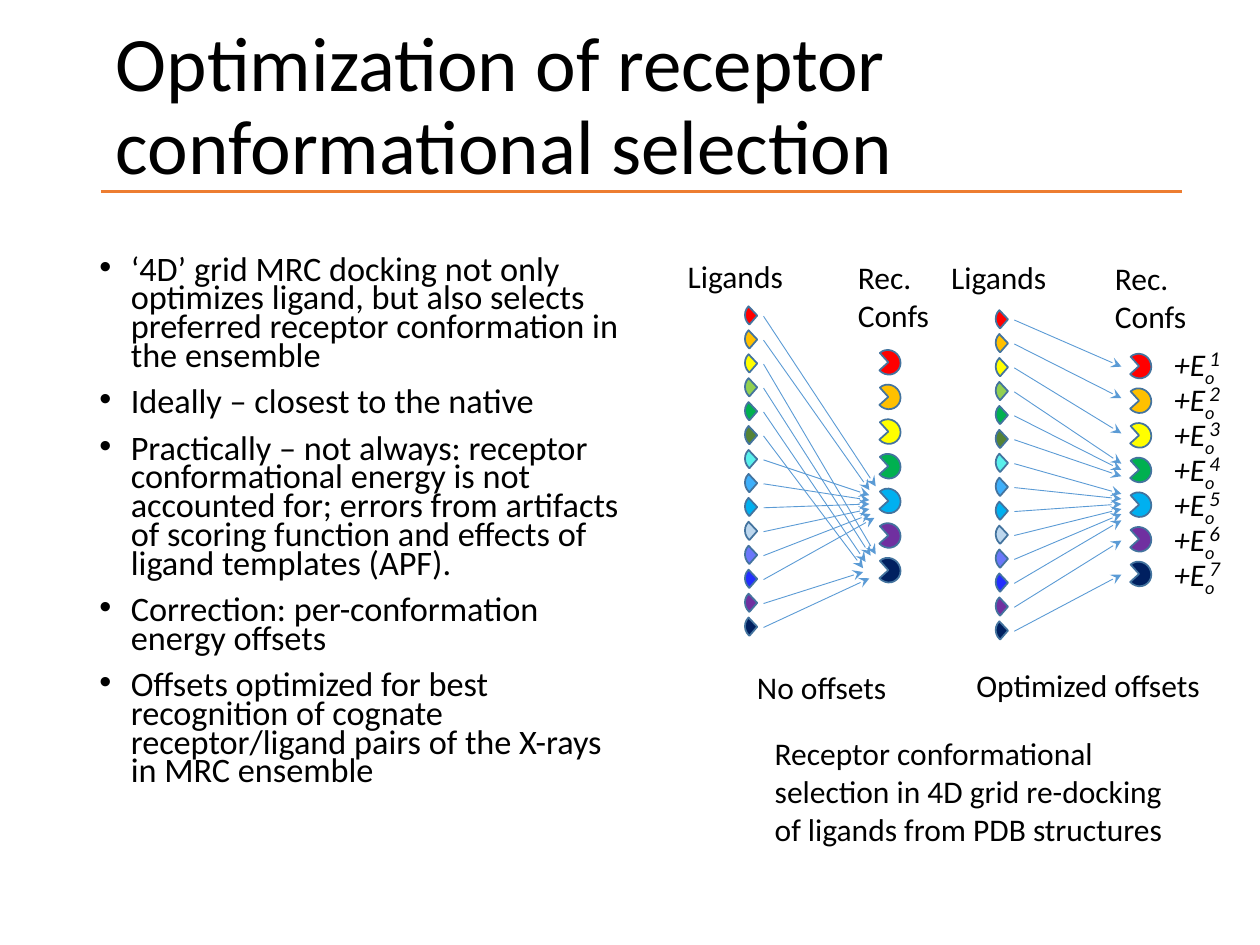
from pptx import Presentation
from pptx import util as u
from pptx.dml.color import RGBColor
from pptx.enum import shapes, text
from pptx.oxml.ns import qn
from lxml import etree

BLACK = RGBColor(0, 0, 0)
ORANGE = RGBColor(0xED, 0x7D, 0x31)
BLUE = RGBColor(0x5B, 0x9B, 0xD5)
EDGE = RGBColor(0x43, 0x73, 0x9E)

TITLE = "Optimization of receptor conformational selection"
POINTS = [
    "‘4D’ grid MRC docking not only optimizes ligand, but also selects "
    "preferred receptor conformation in the ensemble",
    "Ideally – closest to the native",
    "Practically – not always: receptor conformational energy is not accounted for; "
    "errors from artifacts of scoring function and effects of ligand templates (APF).",
    "Correction: per-conformation energy offsets",
    "Offsets optimized for best recognition of cognate receptor/ligand pairs "
    "of the X-rays in MRC ensemble",
]
LABELS = [
    ("Ligands", 5.36, 1.99, 1.02, 0.4),
    ("Ligands", 7.45, 2, 1.02, 0.4),
    ("Rec. Confs", 6.71, 2, 0.95, 0.71),
    ("Rec. Confs", 8.75, 2.01, 0.95, 0.71),
    ("No offsets", 5.91, 5.25, 1.47, 0.4),
    ("Optimized offsets", 7.65, 5.24, 1.99, 0.4),
    ("Receptor conformational selection in 4D grid re-docking of ligands "
     "from PDB structures", 6.05, 5.78, 3.52, 1.01),
]
LIGANDS = ["FF0000", "FFC000", "FFFF00", "92D050", "00B050", "548235", "59F0EC",
           "3EAFFA", "00B0F0", "BDD7EE", "6B77FA", "222EFF", "7030A0", "002060"]
CONFS = ["FF0000", "FFC000", "FFFF00", "00B050", "00B0F0", "7030A0", "002060"]
PANELS = [
    {"left": 5.91, "top": 2.41, "tips": [
        (6.95, 3.86), (6.9, 3.89), (6.95, 4.4), (6.91, 4.41), (6.87, 4.46),
        (6.85, 4.51), (6.9, 3.93), (6.9, 3.97), (6.9, 4), (6.9, 4.04),
        (6.91, 4.08), (6.94, 4.11), (6.85, 4.54), (6.9, 4.59)]},
    {"left": 7.9, "top": 2.44, "tips": [
        (8.9, y) for y in (2.91, 3.16, 3.44, 3.68, 3.73, 3.78, 3.92,
                           3.96, 4, 4.04, 4.08, 4.13, 4.29, 4.56)]},
]
STEP = 0.19
GAP = 1.65 / 6
RISE = 1.67 / 6

prs = Presentation()
prs.slide_width, prs.slide_height = u.Inches(10), u.Inches(7.5)
slide = prs.slides.add_slide(prs.slide_layouts[5])


def put(obj, vals):
    for key, val in vals.items():
        setattr(obj, key, val)


def write(para, words, size, **more):
    run = para.add_run()
    run.text = words
    put(run.font, {"name": "Calibri", "size": u.Pt(size), **more})
    run.font.color.rgb = BLACK
    return run


def box(x, y, w, h):
    frame = slide.shapes.add_textbox(*map(u.Inches, (x, y, w, h))).text_frame
    frame.word_wrap = True
    return frame


def label(words, x, y, w, h, size=18, **more):
    frame = box(x, y, w, h)
    frame.auto_size = text.MSO_AUTO_SIZE.SHAPE_TO_FIT_TEXT
    write(frame.paragraphs[0], words, size, **more)
    return frame.paragraphs[0]


def line(start, end, color, width, arrow=False):
    link = slide.shapes.add_connector(
        shapes.MSO_CONNECTOR.STRAIGHT, *map(u.Inches, (*start, *end)))
    link.line.color.rgb = color
    link.line.width = u.Pt(width)
    if arrow:
        etree.SubElement(link.line._get_or_add_ln(), qn("a:tailEnd"), type="stealth")
    etree.SubElement(link._element.spPr, qn("a:effectLst"))


def pie(x, y, color, turn, angles=()):
    form = slide.shapes.add_shape(
        shapes.MSO_SHAPE.PIE, *map(u.Inches, (x, y, 0.2, 0.19)))
    form.rotation = turn
    for i, angle in enumerate(angles):
        form.adjustments[i] = angle
    form.shadow.inherit = False
    form.fill.solid()
    form.fill.fore_color.rgb = RGBColor.from_string(color)
    form.line.color.rgb = EDGE
    form.line.width = u.Pt(1)


def main():
    title = slide.shapes.title
    put(title, dict(zip(("left", "top", "width", "height"),
                        map(u.Inches, (0.82, 0.13, 8.62, 1.45)))))
    put(title.text_frame, {"word_wrap": True, "auto_size": text.MSO_AUTO_SIZE.NONE,
                           "vertical_anchor": text.MSO_ANCHOR.MIDDLE})
    head = title.text_frame.paragraphs[0]
    put(head, {"alignment": text.PP_ALIGN.LEFT, "line_spacing": 0.9})
    write(head, TITLE, 44)
    line((0.8, 1.52), (9.38, 1.52), ORANGE, 2.25)

    body = box(0.69, 2, 4.36, 4.76)
    for i, point in enumerate(POINTS):
        para = body.add_paragraph() if i else body.paragraphs[0]
        put(para, {"line_spacing": 0.7, "space_before": u.Pt(10 if i else 0)})
        props = para._p.get_or_add_pPr()
        props.set("marL", str(u.Inches(0.25)))
        props.set("indent", str(u.Inches(-0.25)))
        etree.SubElement(props, qn("a:buFont"), typeface="Arial")
        etree.SubElement(props, qn("a:buChar"), char="•")
        write(para, point, 19.6)

    for panel in PANELS:
        left, top = panel["left"], panel["top"]
        for i, color in enumerate(CONFS):
            pie(left + 1.04, top + 0.37 + i * GAP, color, 227.9)
        for i, (color, tip) in enumerate(zip(LIGANDS, panel["tips"])):
            y = top + i * STEP
            pie(left, y, color, 45, (51.54, 109.15))
            line((left + 0.15, y + 0.1), tip, BLUE, 0.5, arrow=True)

    for item in LABELS:
        label(*item)
    for i in range(len(CONFS)):
        y = 2.69 + i * RISE
        para = label("+E", 9.22, y, 0.73, 0.4, italic=True)
        sub = write(para, "o", 18, italic=True)
        sub.font._element.set("baseline", "-25000")
        label(str(i + 1), 9.5, y, 0.73, 0.3, 12, italic=True)

    prs.save("out.pptx")


if __name__ == "__main__":
    main()
